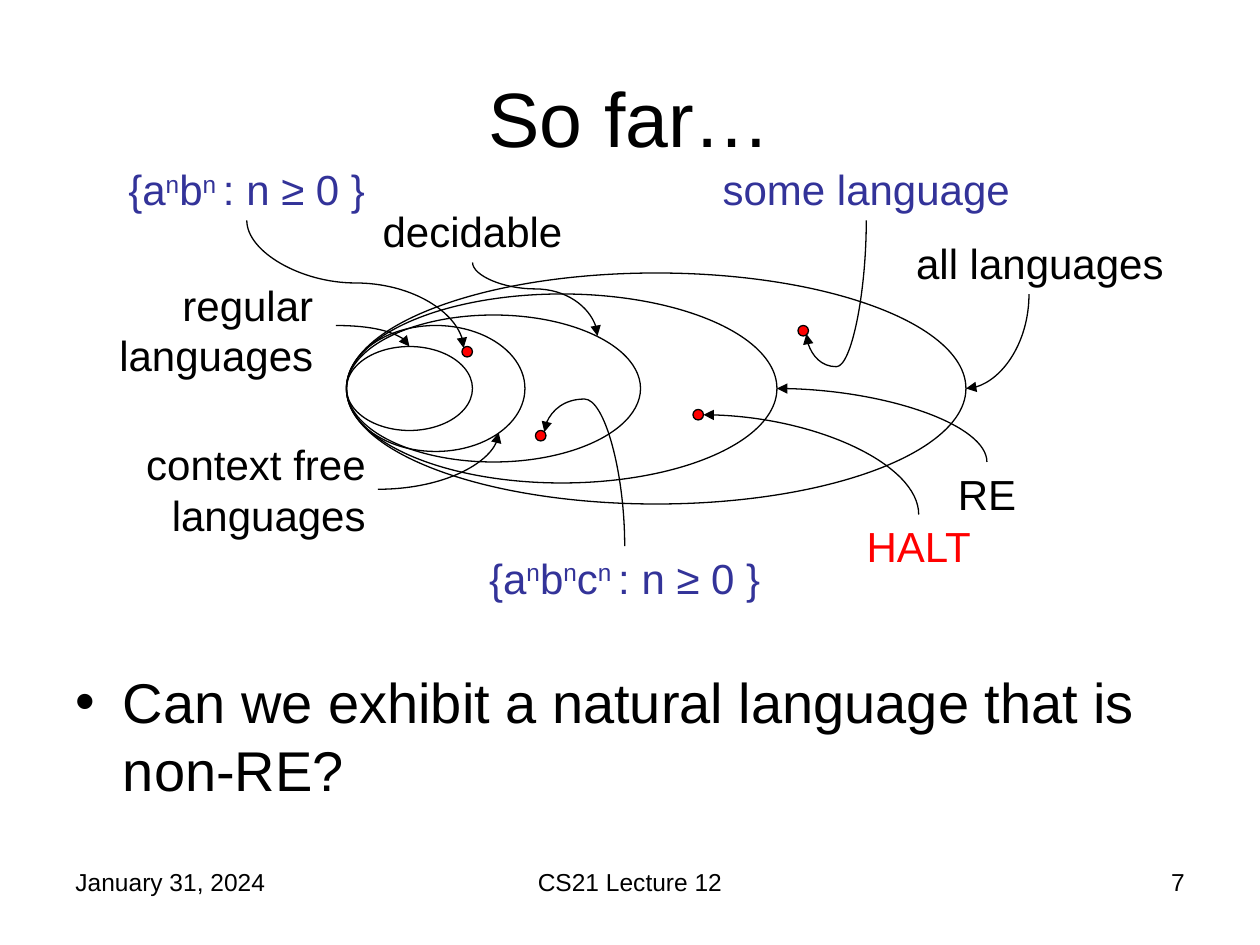
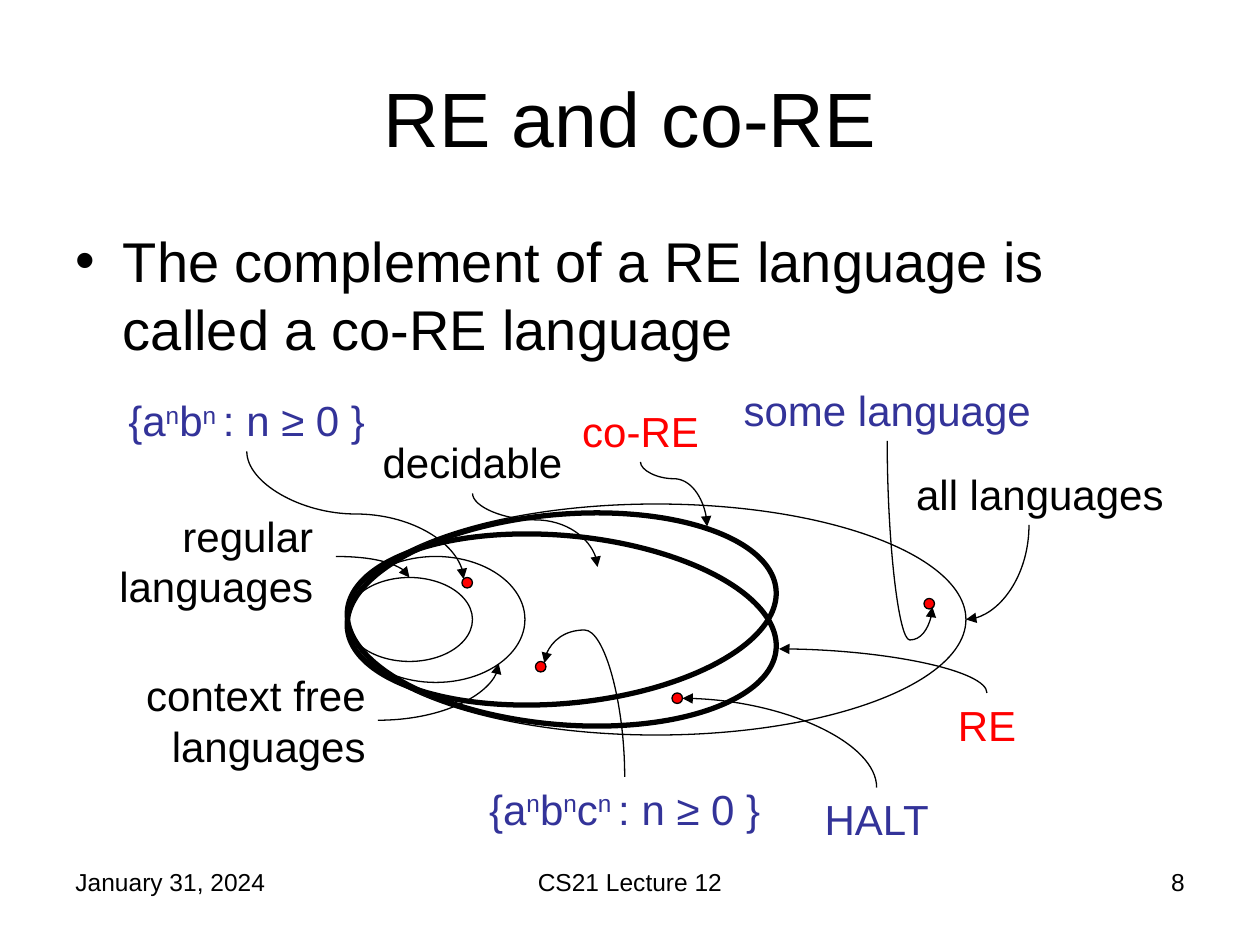
import typing
from dataclasses import dataclass

import pptx
import pptx.dml.color
import pptx.enum.shapes
import pptx.enum.text
import pptx.oxml.ns
import pptx.presentation
import pptx.shapes.autoshape
import pptx.slide
import pptx.text.text
import pptx.util

Align = pptx.enum.text.PP_ALIGN
qn = pptx.oxml.ns.qn

GRID_CM = 2.54 / 12  # the slide is 120 by 90 grid steps
FONT = "Arial"
BLACK, BLUE, RED = "000000", "333399", "FF0000"
THIN, THICK = 0.75, 3
SETS_LEFT = 33


class Box(typing.NamedTuple):
    """A rectangle in grid steps."""
    left: float
    top: float
    width: float
    height: float = 6


@dataclass
class Label:
    text: str  # superscripts stand between carets
    box: Box
    color: str = BLACK
    align: Align = Align.CENTER


@dataclass
class LanguageSet:
    width: float
    height: float
    middle: float = 37
    rotation: float = 0
    line_width: float = THIN


@dataclass
class Arrow:
    start: tuple[float, float]
    end: tuple[float, float]
    bend: float | None = None  # place of the middle bend along the start direction
    starts_level: bool = False


@dataclass
class Diagram:
    """Sets, labels, arrows and dots, all moved down by the same shift."""
    shift: float
    sets: list[LanguageSet]
    labels: list[Label]
    arrows: list[Arrow]
    dots: list[tuple[float, float]]


@dataclass
class Page:
    number: int
    title: str
    bullet: str
    bullet_box: Box
    diagram: Diagram


SHARED_SETS = [LanguageSet(59, 22), LanguageSet(17, 12), LanguageSet(12, 8)]
SHARED_LABELS = [
    Label("regular languages", Box(9, 26, 22, 10.8), align=Align.RIGHT),
    Label("context free languages", Box(8, 41.2, 28, 10.8), align=Align.RIGHT),
    Label("all languages", Box(84, 22, 28), align=Align.RIGHT),
    Label("decidable", Box(31, 19, 28)),
    Label("{a^n^b^n ^: n ≥ 0 }", Box(6, 15, 35), BLUE),
    Label("{a^n^b^n^c^n ^: n ≥ 0 }", Box(42, 52, 35), BLUE),
]
SHARED_ARROWS = [
    Arrow((32, 31), (39, 33), starts_level=True),
    Arrow((36, 46.6), (47.5, 41.2), starts_level=True),
    Arrow((98, 28), (92, 37)),
    Arrow((45, 25), (56.9, 32), 0.36),
    Arrow((23.5, 21), (44.15, 33.15), 0.49),
    Arrow((59.5, 52), (51.85, 41.15), 1.29),
]
SHARED_DOTS = [(44, 33), (51, 41)]

PAGES = [
    Page(
        7, "So far…",
        "Can we exhibit a natural language that is non-RE?", Box(6, 63, 108, 17.4),
        Diagram(
            shift=0,
            sets=SHARED_SETS + [LanguageSet(41, 18), LanguageSet(28, 14)],
            labels=SHARED_LABELS + [
                Label("RE", Box(80, 44, 28)),
                Label("some language", Box(65, 15, 35), BLUE),
                Label("HALT", Box(80, 49, 15), RED),
            ],
            arrows=SHARED_ARROWS + [
                Arrow((94, 44), (74, 37)),
                Arrow((82.5, 21), (76.8, 31.8), 1.29),
                Arrow((87.5, 49), (67, 39.5)),
            ],
            dots=SHARED_DOTS + [(76, 31), (66, 39)],
        ),
    ),
    Page(
        8, "RE and co-RE",
        "The complement of a RE language is called a co-RE language", Box(6, 21, 108, 16),
        Diagram(
            shift=22,
            sets=SHARED_SETS + [
                LanguageSet(41, 18, 38, 5.2, THICK),
                LanguageSet(41, 18, 36, -5.2, THICK),
            ],
            labels=SHARED_LABELS + [
                Label("RE", Box(80, 44, 28), RED),
                Label("co-RE", Box(47, 16, 28), RED),
                Label("some language", Box(67, 14, 35), BLUE),
                Label("HALT", Box(76, 53, 15), BLUE),
            ],
            arrows=SHARED_ARROWS + [
                Arrow((94, 44), (74.2, 39.8)),
                Arrow((84.5, 20), (88.8, 35.8), 1.2),
                Arrow((83.5, 53), (65, 44.5)),
                Arrow((61, 22), (67.35, 28.15), 0.26),
            ],
            dots=SHARED_DOTS + [(88, 35), (64, 44)],
        ),
    ),
]


def grid(steps: float) -> pptx.util.Length:
    return pptx.util.Cm(steps * GRID_CM)


def rgb(color: str) -> pptx.dml.color.RGBColor:
    return pptx.dml.color.RGBColor.from_string(color)


def write(frame: pptx.text.text.TextFrame, text: str, size: float,
          color: str = BLACK, align: Align = Align.LEFT) -> None:
    """Fill the frame with one paragraph, raising what stands between carets."""
    frame.word_wrap = True
    paragraph = frame.paragraphs[0]
    paragraph.alignment = align
    for index, part in enumerate(text.split("^")):
        run = paragraph.add_run()
        run.text = part
        run.font.name = FONT
        run.font.size = pptx.util.Pt(size)
        run.font.color.rgb = rgb(color)
        if index % 2:
            run._r.get_or_add_rPr().set("baseline", "30000")


def add_text(slide: pptx.slide.Slide, label: Label, size: float,
             shift: float = 0) -> pptx.shapes.autoshape.Shape:
    left, top, width, height = label.box
    shape = slide.shapes.add_textbox(grid(left), grid(top + shift), grid(width), grid(height))
    write(shape.text_frame, label.text, size, label.color, label.align)
    return shape


def fill_placeholder(shape: pptx.shapes.autoshape.Shape, box: Box, text: str,
                     size: float, align: Align) -> None:
    shape.left, shape.top, shape.width, shape.height = map(grid, box)
    shape.text_frame.auto_size = pptx.enum.text.MSO_AUTO_SIZE.NONE
    write(shape.text_frame, text, size, align=align)


def add_ellipse(slide: pptx.slide.Slide, box: Box, line_width: float = THIN,
                fill: str | None = None) -> pptx.shapes.autoshape.Shape:
    shape = slide.shapes.add_shape(pptx.enum.shapes.MSO_SHAPE.OVAL, *map(grid, box))
    shape.shadow.inherit = False
    shape.line.color.rgb = rgb(BLACK)
    shape.line.width = pptx.util.Pt(line_width)
    if fill:
        shape.fill.solid()
        shape.fill.fore_color.rgb = rgb(fill)
    else:
        shape.fill.background()
    return shape


def add_arrow(slide: pptx.slide.Slide, arrow: Arrow, shift: float) -> None:
    """Draw a curved arrow; one that starts upright is a level one turned by a quarter."""
    (x1, y1), (x2, y2) = arrow.start, arrow.end
    across, down = x2 - x1, y2 - y1
    width, height = abs(across), abs(down)
    if not arrow.starts_level:
        width, height = height, width
    left = (x1 + x2 - width) / 2
    top = (y1 + y2 - height) / 2 + shift
    connector = slide.shapes.add_connector(
        pptx.enum.shapes.MSO_CONNECTOR.CURVE,
        grid(left), grid(top), grid(left + width), grid(top + height))
    connector.line.color.rgb = rgb(BLACK)
    connector.line.width = pptx.util.Pt(THIN)

    properties = connector._element.spPr
    frame = properties.find(qn("a:xfrm"))
    if arrow.starts_level:
        frame.set("flipV", str(int(down < 0)))
    else:
        frame.set("rot", str((270 if across > 0 else 90) * 60000))
        frame.set("flipH", str(int((across > 0) == (down > 0))))

    geometry = properties.find(qn("a:prstGeom"))
    if arrow.bend is None:
        geometry.set("prst", "curvedConnector2")
    else:
        guides = geometry.find(qn("a:avLst"))
        guide = guides.makeelement(qn("a:gd"), {
            "name": "adj1", "fmla": f"val {round(arrow.bend * 100000)}"})
        guides.append(guide)

    line = properties.find(qn("a:ln"))
    line.append(line.makeelement(qn("a:tailEnd"), {"type": "triangle"}))
    properties.append(properties.makeelement(qn("a:effectLst"), {}))


def add_diagram(slide: pptx.slide.Slide, diagram: Diagram) -> None:
    shift = diagram.shift
    for item in diagram.sets:
        top = item.middle - item.height / 2 + shift
        ellipse = add_ellipse(slide, Box(SETS_LEFT, top, item.width, item.height),
                              item.line_width)
        ellipse.rotation = item.rotation
    for label in diagram.labels:
        shape = add_text(slide, label, 24, shift)
        shape.text_frame.auto_size = pptx.enum.text.MSO_AUTO_SIZE.SHAPE_TO_FIT_TEXT
    for left, top in diagram.dots:
        add_ellipse(slide, Box(left, top + shift, 1, 1), fill=RED)
    for arrow in diagram.arrows:
        add_arrow(slide, arrow, shift)


def add_footer(slide: pptx.slide.Slide, number: int) -> None:
    for label in (
        Label("January 31, 2024", Box(6, 82, 28), align=Align.LEFT),
        Label("CS21 Lecture 12", Box(41, 82, 38)),
        Label(str(number), Box(86, 82, 28), align=Align.RIGHT),
    ):
        add_text(slide, label, 14)


def add_page(presentation: pptx.presentation.Presentation, page: Page) -> None:
    slide = presentation.slides.add_slide(presentation.slide_layouts[1])
    fill_placeholder(slide.shapes.title, Box(6, 3.6, 108, 15), page.title, 44, Align.CENTER)
    fill_placeholder(slide.placeholders[1], page.bullet_box, page.bullet, 32, Align.LEFT)
    add_diagram(slide, page.diagram)
    add_footer(slide, page.number)


def main() -> None:
    presentation = pptx.Presentation()
    presentation.slide_width, presentation.slide_height = grid(120), grid(90)
    for page in PAGES:
        add_page(presentation, page)
    presentation.save("out.pptx")


if __name__ == "__main__":
    main()
